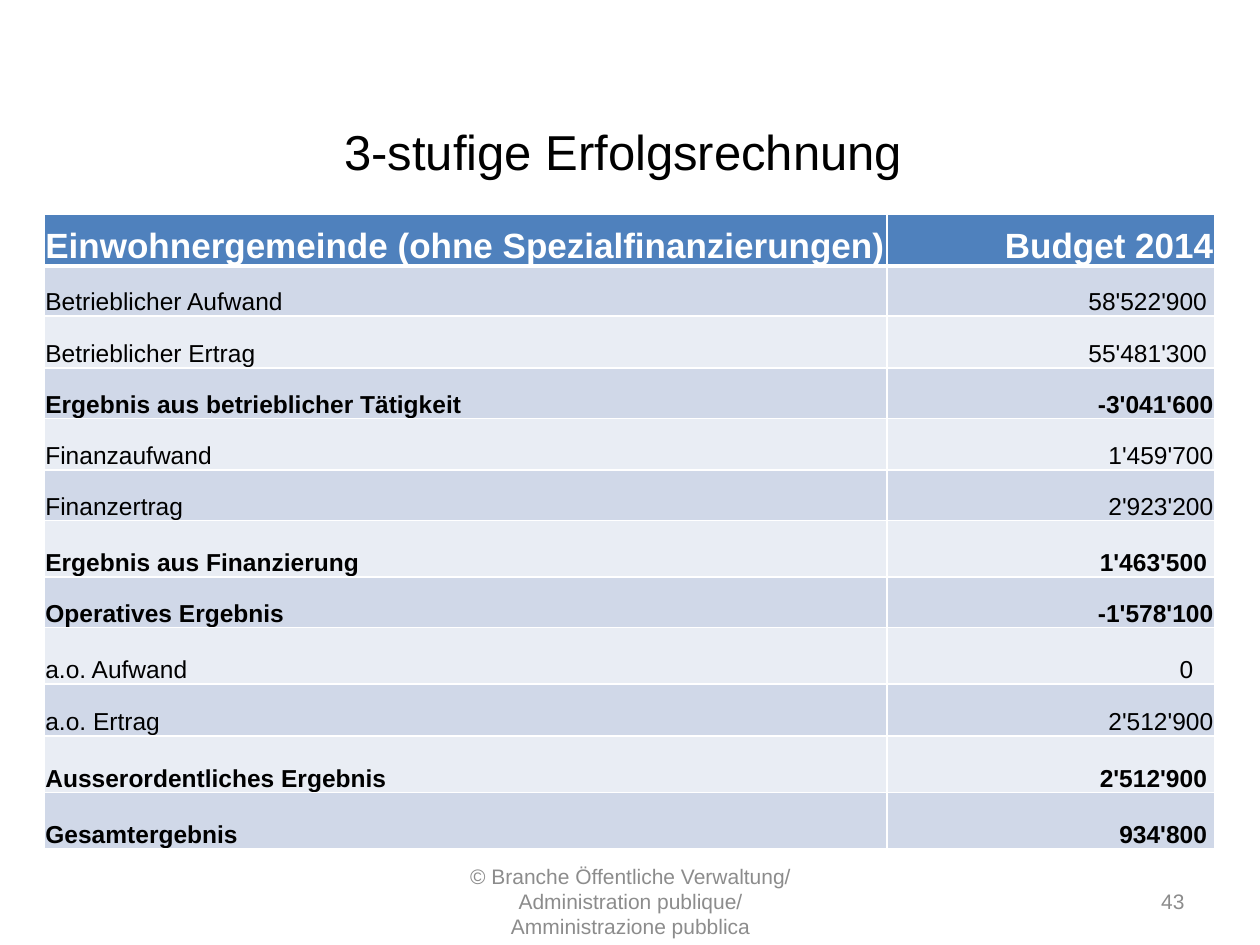
from lxml.etree import SubElement
from pptx import Presentation
from pptx.dml.color import RGBColor
from pptx.enum.text import MSO_ANCHOR, PP_ALIGN
from pptx.oxml.ns import qn
from pptx.util import Inches, Pt

COLORS = {
    "text": "000000",
    "muted": "8C8C8C",
    "header": "4F81BD",
    "header_text": "FFFFFF",
    "border": "FFFFFF",
    "band_dark": "D0D8E8",
    "band_light": "E9EDF4",
}
HEADER = ("Einwohnergemeinde (ohne Spezialfinanzierungen)", "Budget 2014")
PAD = 0.01
# label, value, bold, row height, right margin of the value
ROWS = [
    ("Betrieblicher Aufwand", "58'522'900", False, 0.4, 0.06),
    ("Betrieblicher Ertrag", "55'481'300", False, 0.41, 0.06),
    ("Ergebnis aus betrieblicher Tätigkeit", "-3'041'600", True, 0.4, PAD),
    ("Finanzaufwand", "1'459'700", False, 0.41, PAD),
    ("Finanzertrag", "2'923'200", False, 0.4, PAD),
    ("Ergebnis aus Finanzierung", "1'463'500", True, 0.45, 0.06),
    ("Operatives Ergebnis", "-1'578'100", True, 0.4, PAD),
    ("a.o. Aufwand", "0", False, 0.45, 0.17),
    ("a.o. Ertrag", "2'512'900", False, 0.41, PAD),
    ("Ausserordentliches Ergebnis", "2'512'900", True, 0.45, 0.06),
    ("Gesamtergebnis", "934'800", True, 0.45, 0.06),
]


def rgb(name):
    return RGBColor.from_string(COLORS[name])


def write(tf, text, color, align=PP_ALIGN.LEFT, **font):
    p = tf.paragraphs[0]
    p.alignment = align
    r = p.add_run()
    r.text = text
    r.font.color.rgb = rgb(color)
    for name, value in {"name": "Arial", **font}.items():
        setattr(r.font, name, value)


def add_text(slide, box, text, size, color, align):
    tf = slide.shapes.add_textbox(*map(Inches, box)).text_frame
    tf.word_wrap = True
    tf.vertical_anchor = MSO_ANCHOR.MIDDLE
    write(tf, text, color, align, size=Pt(size))


def set_borders(cell, bottom):
    """Draw all four borders 1 pt wide, except for the given bottom width."""
    tc_pr = cell._tc.get_or_add_tcPr()
    for side, width in (("L", 1), ("R", 1), ("T", 1), ("B", bottom)):
        ln = SubElement(tc_pr, qn(f"a:ln{side}"), w=str(Pt(width)))
        fill = SubElement(ln, qn("a:solidFill"))
        SubElement(fill, qn("a:srgbClr"), val=COLORS["border"])


def fill_cell(cell, text, fill, color, align, right=PAD, bottom=1, **font):
    set_borders(cell, bottom)
    cell.fill.solid()
    cell.fill.fore_color.rgb = rgb(fill)
    cell.vertical_anchor = MSO_ANCHOR.BOTTOM
    margins = {"left": PAD, "right": right, "top": PAD, "bottom": 0}
    for side, value in margins.items():
        setattr(cell, f"margin_{side}", Inches(value))
    write(cell.text_frame, text, color, align, **font)


def add_budget_table(slide):
    heights = [0.41] + [row[3] for row in ROWS]
    table = slide.shapes.add_table(
        len(heights), 2, Inches(0.35), Inches(1.7), Inches(9.29), Inches(sum(heights))
    ).table
    for column, width in zip(table.columns, (6.69, 2.6)):
        column.width = Inches(width)
    for row, height in zip(table.rows, heights):
        row.height = Inches(height)

    aligns = (PP_ALIGN.LEFT, PP_ALIGN.RIGHT)
    for c, text in enumerate(HEADER):
        fill_cell(table.cell(0, c), text, "header", "header_text", aligns[c],
                  bottom=3, size=Pt(20), bold=True)
    for i, (label, value, bold, _, right) in enumerate(ROWS, 1):
        band = "band_dark" if i % 2 else "band_light"
        for c, (text, margin) in enumerate(((label, PAD), (value, right))):
            fill_cell(table.cell(i, c), text, band, "text", aligns[c],
                      right=margin, size=Pt(14), bold=bold)


def main():
    prs = Presentation()
    prs.slide_width, prs.slide_height = Inches(10), Inches(7.5)
    slide = prs.slides.add_slide(prs.slide_layouts[6])
    add_text(slide, (0.5, 0.84, 9, 0.71), "3-stufige Erfolgsrechnung ",
             28, "text", PP_ALIGN.CENTER)
    add_budget_table(slide)
    add_text(slide, (7.17, 6.95, 2.33, 0.4), "43", 12, "muted", PP_ALIGN.RIGHT)
    add_text(slide, (3.42, 6.95, 3.17, 0.4),
             "© Branche Öffentliche Verwaltung/ Administration publique/ "
             "Amministrazione pubblica", 12, "muted", PP_ALIGN.CENTER)
    prs.save("out.pptx")


if __name__ == "__main__":
    main()
